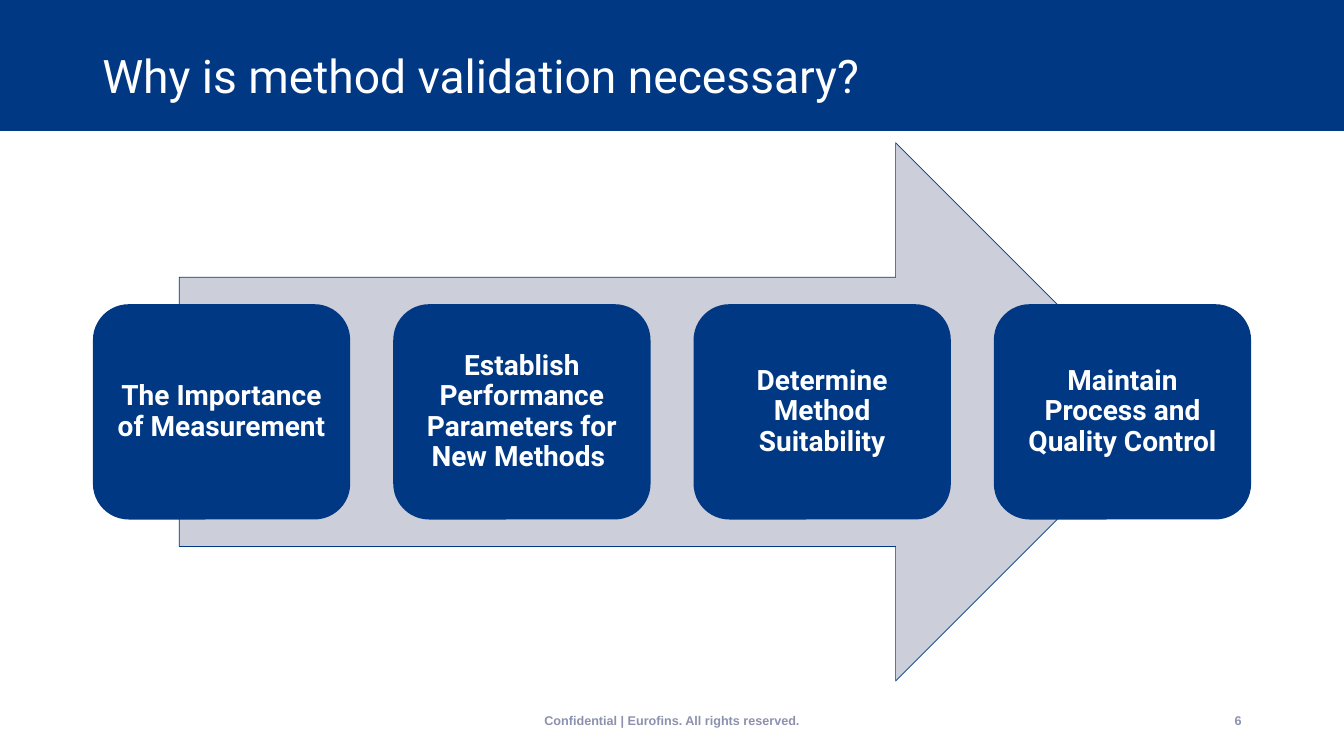
from pptx import Presentation
from pptx.dml.color import RGBColor
from pptx.enum.shapes import MSO_SHAPE
from pptx.enum.text import MSO_ANCHOR, PP_ALIGN
from pptx.util import Pt

NAVY, GREY, MUTED, WHITE = "003883", "CCCED9", "8C91AD", "FFFFFF"


def color(value):
    return RGBColor.from_string(value)


def write(sp, text, size=20, font="Roboto", fill=WHITE, bold=False,
          align=PP_ALIGN.LEFT, spacing=1.0, inset=None):
    tf = sp.text_frame
    tf.word_wrap = True
    tf.vertical_anchor = MSO_ANCHOR.MIDDLE
    if inset is not None:
        tf.margin_left = tf.margin_right = Pt(inset)
        tf.margin_top = tf.margin_bottom = Pt(inset)
    p = tf.paragraphs[0]
    p.alignment = align
    p.line_spacing = spacing
    r = p.add_run()
    r.text = text
    r.font.name = font
    r.font.size = Pt(size)
    r.font.bold = bold
    r.font.color.rgb = color(fill)


class Deck:
    def __init__(self, width, height):
        self.prs = Presentation()
        self.prs.slide_width, self.prs.slide_height = Pt(width), Pt(height)
        self.s = self.prs.slides.add_slide(self.prs.slide_layouts[6])

    def shape(self, kind, x, y, w, h, fill, line=None):
        sp = self.s.shapes.add_shape(kind, Pt(x), Pt(y), Pt(w), Pt(h))
        sp.shadow.inherit = False
        sp.fill.solid()
        sp.fill.fore_color.rgb = color(fill)
        if line:
            sp.line.color.rgb = color(line)
            sp.line.width = Pt(0.5)
        else:
            sp.line.fill.background()
        return sp

    def text(self, x, y, w, h, text, **style):
        sp = self.s.shapes.add_textbox(Pt(x), Pt(y), Pt(w), Pt(h))
        write(sp, text, **style)

    def card(self, x, y, w, h, text):
        sp = self.shape(MSO_SHAPE.ROUNDED_RECTANGLE, x, y, w, h, NAVY)
        write(sp, text, bold=True, align=PP_ALIGN.CENTER, spacing=0.9, inset=6)


def main():
    deck = Deck(960, 540)
    deck.shape(MSO_SHAPE.RECTANGLE, 0, 0, 960, 93.6, NAVY)
    deck.text(66, 29, 828, 54, "Why is method validation necessary?",
              size=33, spacing=0.9)

    deck.shape(MSO_SHAPE.RIGHT_ARROW, 128, 102, 704, 384.5, GREY, NAVY)
    steps = ["The Importance of Measurement",
             "Establish Performance Parameters for New Methods ",
             "Determine Method Suitability",
             "Maintain Process and Quality Control"]
    left, pitch = 66.4, 214.5
    for i, step in enumerate(steps):
        deck.card(left + i * pitch, 217.3, 183.8, 153.8, step)

    footer = dict(size=9, font="Arial", fill=MUTED, bold=True)
    deck.text(318, 500.4, 324, 28.8,
              "Confidential | Eurofins. All rights reserved.",
              align=PP_ALIGN.CENTER, **footer)
    deck.text(678, 500.4, 216, 28.8, "6", align=PP_ALIGN.RIGHT, **footer)
    deck.prs.save("out.pptx")


if __name__ == "__main__":
    main()
